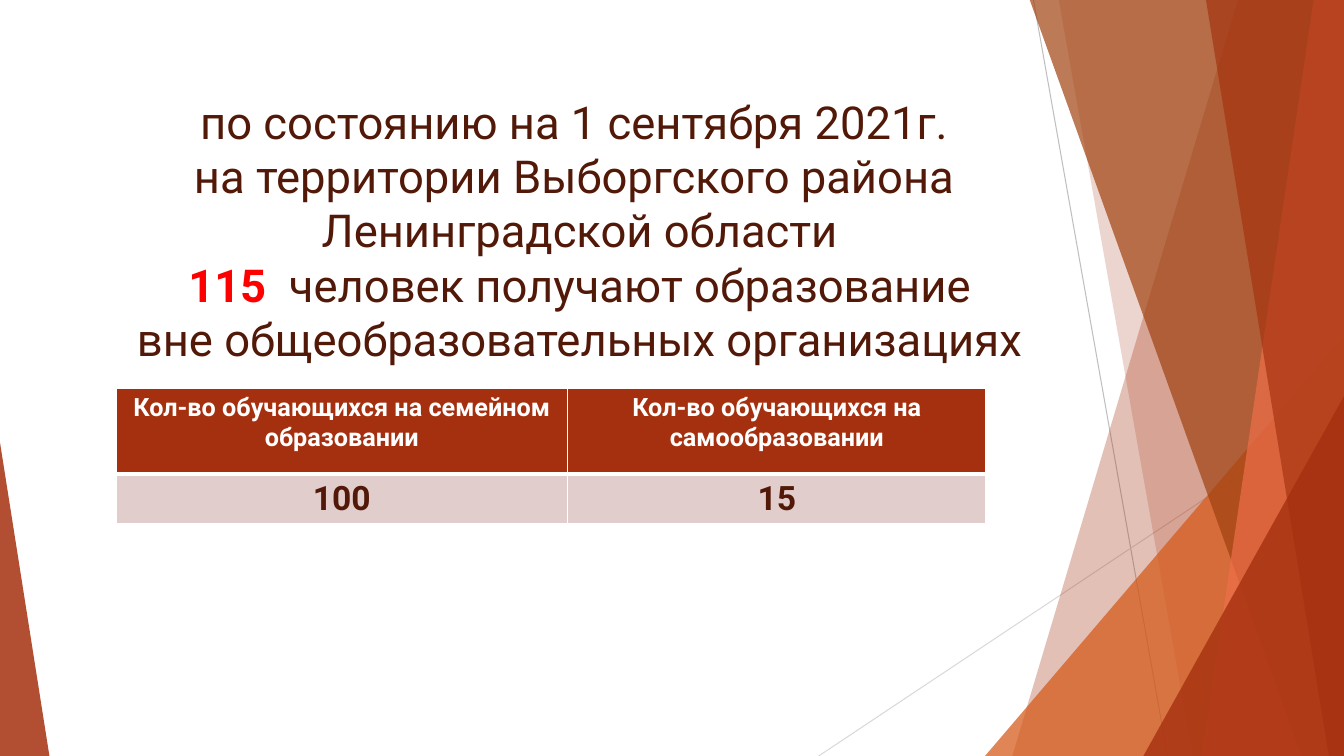
import pptx
import pptx.util
import pptx.dml.color
import pptx.enum.shapes
import pptx.enum.text
import pptx.oxml
import pptx.oxml.ns
from dataclasses import dataclass

Inches = pptx.util.Inches
Pt = pptx.util.Pt
ALIGN = pptx.enum.text.PP_ALIGN
ANCHOR = pptx.enum.text.MSO_ANCHOR
SHAPE = pptx.enum.shapes.MSO_SHAPE
WIDE, HIGH = 13.33, 7.5


@dataclass(frozen=True)
class Theme:
    font: str = "Roboto"
    rust: str = "A5300F"
    orange: str = "D55816"
    brown: str = "A04210"
    coral: str = "EE6E4A"
    dark: str = "521808"
    red: str = "FF0000"
    white: str = "FFFFFF"
    pink: str = "E1CDCC"
    gray: str = "BFBFBF"
    pale: str = "D9D9D9"
    title: float = 32.4
    head: float = 18
    value: float = 24


def rgb(code):
    return pptx.dml.color.RGBColor.from_string(code)


class Deck:
    def __init__(self, theme):
        self.theme = theme
        self.show = pptx.Presentation()
        self.show.slide_width = Inches(WIDE)
        self.show.slide_height = Inches(HIGH)
        self.slide = self.show.slides.add_slide(self.show.slide_layouts[5])

    def style(self, run, size, color, bold):
        font = run.font
        font.name, font.size, font.bold = self.theme.font, Pt(size), bold
        font.color.rgb = rgb(color)

    def paint(self, shape, color, alpha):
        shape.shadow.inherit = False
        shape.line.fill.background()
        shape.fill.solid()
        shape.fill.fore_color.rgb = rgb(color)
        tint = shape.fill._xPr.find(".//" + pptx.oxml.ns.qn("a:srgbClr"))
        node = pptx.oxml.parse_xml(
            f'<a:alpha {pptx.oxml.ns.nsdecls("a")} val="{alpha * 1000}"/>')
        tint.append(node)

    def line(self, x1, y1, x2, y2, color):
        line = self.slide.shapes.add_connector(
            pptx.enum.shapes.MSO_CONNECTOR.STRAIGHT,
            Inches(x1), Inches(y1), Inches(x2), Inches(y2))
        line.line.color.rgb = rgb(color)
        line.line.width = Pt(0.75)
        line._element.spPr.append(pptx.oxml.parse_xml(
            f'<a:effectLst {pptx.oxml.ns.nsdecls("a")}/>'))

    def band(self, top, base, color, alpha):
        """Four-sided band that runs to the right edge of the slide."""
        spots = [(top, -0.01), (WIDE, -0.01), (WIDE, HIGH), (base, HIGH)]
        spots = [(Inches(x), Inches(y)) for x, y in spots]
        form = self.slide.shapes.build_freeform(*spots[0], scale=1.0)
        form.add_line_segments(spots[1:], close=True)
        self.paint(form.convert_to_shape(), color, alpha)

    def wedge(self, left, top, width, peak, color, alpha):
        """Triangle that stands on the bottom edge of the slide."""
        shape = self.slide.shapes.add_shape(
            SHAPE.ISOSCELES_TRIANGLE, Inches(left), Inches(top),
            Inches(width), Inches(HIGH - top))
        shape.adjustments[0] = peak
        self.paint(shape, color, alpha)

    def title(self, left, top, width, height, intro, count, lines):
        theme, box = self.theme, self.slide.shapes.title
        box.left, box.top = Inches(left), Inches(top)
        box.width, box.height = Inches(width), Inches(height)
        frame = box.text_frame
        frame.word_wrap = True
        frame.auto_size = pptx.enum.text.MSO_AUTO_SIZE.NONE
        frame.vertical_anchor = ANCHOR.TOP
        para = frame.paragraphs[0]
        para.text = intro
        para.alignment = ALIGN.CENTER
        mark = para.add_run()
        mark.text = count
        para.add_run().text = lines[0]
        for text in lines[1:]:
            para.add_line_break()
            para.add_run().text = text
        for run in para.runs:
            self.style(run, theme.title, theme.dark, False)
        self.style(mark, theme.title, theme.red, True)

    def edge(self, cell, side, width):
        props = cell._tc.get_or_add_tcPr()
        node = pptx.oxml.parse_xml(
            f'<a:{side} {pptx.oxml.ns.nsdecls("a")} w="{Pt(width)}">'
            f'<a:solidFill><a:srgbClr val="{self.theme.white}"/></a:solidFill>'
            f'</a:{side}>')
        props.append(node)

    def cell(self, cell, text, size, color, fill, base):
        para = cell.text_frame.paragraphs[0]
        para.text = text
        para.alignment = ALIGN.CENTER
        self.style(para.runs[0], size, color, True)
        for side in ("lnL", "lnR", "lnT"):
            self.edge(cell, side, base if side == "lnT" and base > 1 and False else 1)
        self.edge(cell, "lnB", base)
        cell.fill.solid()
        cell.fill.fore_color.rgb = rgb(fill)

    def table(self, left, top, cols, rows, data):
        theme = self.theme
        grid = self.slide.shapes.add_table(
            len(rows), len(cols), Inches(left), Inches(top),
            Inches(sum(cols)), Inches(sum(rows))).table
        for col, width in zip(grid.columns, cols):
            col.width = Inches(width)
        for row, height in zip(grid.rows, rows):
            row.height = Inches(height)
        looks = [(theme.head, theme.white, theme.rust, 3),
                 (theme.value, theme.dark, theme.pink, 1)]
        for row, texts, look in zip(grid.rows, data, looks):
            for cell, text in zip(row.cells, texts):
                self.cell(cell, text, *look)
        # The rule under the header is shared with the row below
        for cell in grid.rows[1].cells:
            rule = cell._tc.tcPr.find(pptx.oxml.ns.qn("a:lnT"))
            rule.set("w", str(Pt(3)))


def main():
    theme = Theme()
    deck = Deck(theme)

    # Thin lines
    deck.line(10.25, 0, 11.58, HIGH, theme.gray)
    deck.line(WIDE, 4.03, 8.12, HIGH, theme.pale)

    # Facets on the right, from back to front
    deck.band(12.28, 10.04, theme.rust, 30)
    deck.band(10.5, 11.83, theme.rust, 20)
    deck.wedge(9.77, 3.33, 3.56, 1, theme.orange, 72)
    deck.band(10.21, 12.91, theme.brown, 70)
    deck.band(13.03, 11.92, theme.coral, 70)
    deck.band(11.96, 13.18, theme.rust, 65)
    deck.wedge(11.34, 3.93, 1.99, 1, theme.rust, 80)

    # Facet on the left
    deck.wedge(0, 4.39, 0.49, 0, theme.rust, 85)

    # Title
    deck.title(0, 0.88, 11.5, 2.64,
               "по состоянию на 1 сентября 2021г. \v"
               "на территории Выборгского района \v"
               "Ленинградской области\v",
               " 115  ",
               ["человек получают образование ",
                "вне общеобразовательных организациях"])

    # Table of learners
    deck.table(1.15, 3.85, [4.48, 4.15], [0.85, 0.49],
               [["Кол-во обучающихся на семейном образовании",
                 "Кол-во обучающихся на самообразовании"],
                ["100", "15"]])

    deck.show.save("out.pptx")


if __name__ == "__main__":
    main()
